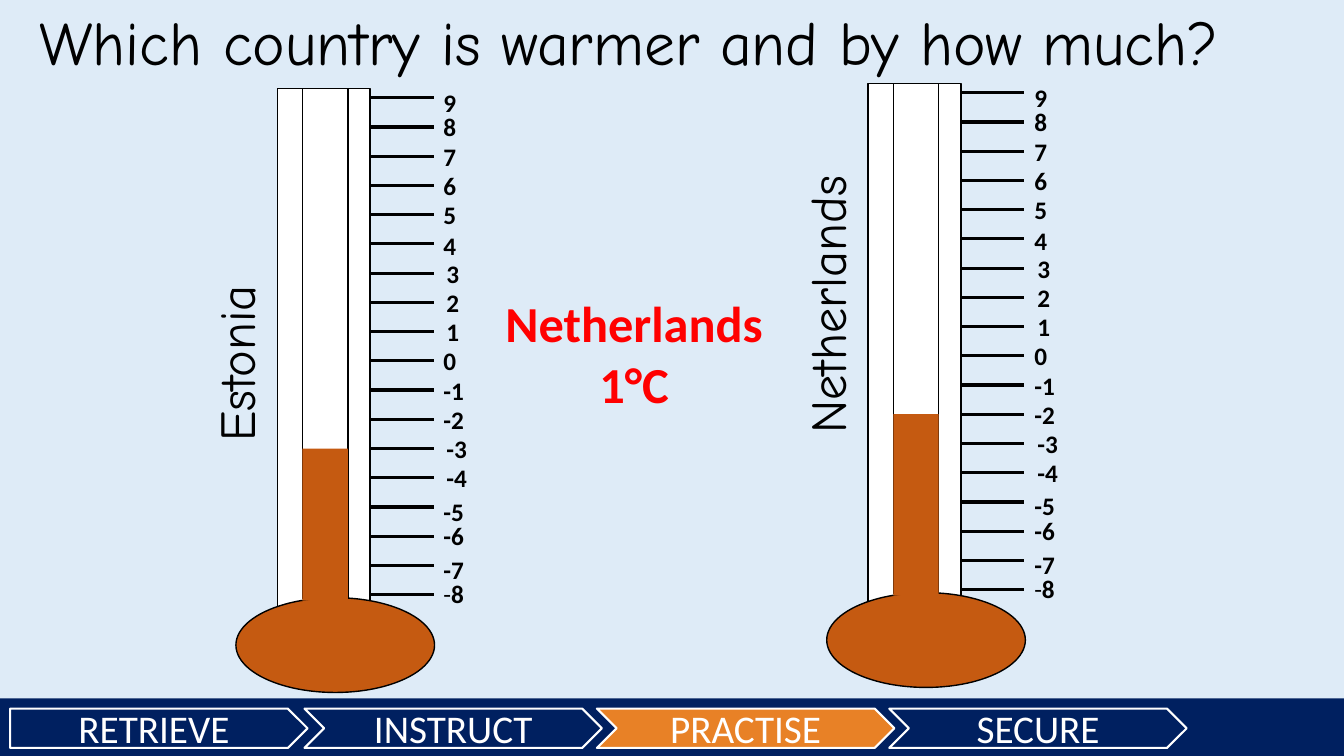
import pptx
import pptx.dml.color
import pptx.enum.shapes
import pptx.enum.text
import pptx.oxml.ns
import pptx.util
from lxml import etree

Inches = pptx.util.Inches
KIND = pptx.enum.shapes.MSO_SHAPE
ALIGN = pptx.enum.text.PP_ALIGN
ANCHOR = pptx.enum.text.MSO_ANCHOR

HUES = {
    "sky": "DEEBF7", "navy": "002060", "amber": "E88126", "rust": "C55A11",
    "white": "FFFFFF", "black": "000000", "red": "FF0000",
}
FONTS = {
    "title": {"name": "Comic Neue", "size": pptx.util.Pt(44), "bold": False},
    "place": {"name": "Comic Neue", "size": pptx.util.Pt(36), "bold": False},
    "stage": {"name": "Calibri", "size": pptx.util.Pt(28), "bold": False},
    "mark": {"name": "Calibri", "size": pptx.util.Pt(18), "bold": True},
    "reply": {"name": "Calibri", "size": pptx.util.Pt(36), "bold": True},
}
STAGES = ["RETRIEVE", "INSTRUCT", "PRACTISE", "SECURE"]
TOP_MARK, LOW_MARK, STEP = 9, -8, 0.29
RIGHT = {-4, -3, 1, 2, 3}
DROP = {9: 0.05, 4: 0.02, -5: 0.04, -6: -0.01, -7: 0.04, -8: -0.01}


def hue(name):
    """Return the named colour."""
    return pptx.dml.color.RGBColor.from_string(HUES[name])


def style(font, kind, color):
    """Apply a named set of font values and a colour."""
    for key, value in FONTS[kind].items():
        setattr(font, key, value)
    font.color.rgb = hue(color)


def write(shape, text, kind, color="black", **form):
    """Write one paragraph into a shape and format it."""
    shape.text_frame.word_wrap = True
    para = shape.text_frame.paragraphs[0]
    run = para.add_run()
    run.text = text
    style(run.font, kind, color)
    for key, value in form.items():
        setattr(para, key, value)
    return para


def label(shapes, box, text, kind, color="black", turn=0, **form):
    """Add a text box, turned if asked."""
    item = shapes.add_textbox(*map(Inches, box))
    item.rotation = turn
    return write(item, text, kind, color, **form)


def block(shapes, kind, box, fill, edge=None, width=1):
    """Add a filled preset shape with an optional outline."""
    item = shapes.add_shape(kind, *map(Inches, box))
    item.shadow.inherit = False
    item.fill.solid()
    item.fill.fore_color.rgb = hue(fill)
    if edge:
        item.line.color.rgb = hue(edge)
        item.line.width = pptx.util.Pt(width)
    else:
        item.line.fill.background()
    return item


def tick(shapes, left, top):
    """Add one scale line."""
    ends = map(Inches, (left, top, left + 0.63, top))
    line = shapes.add_connector(pptx.enum.shapes.MSO_CONNECTOR.STRAIGHT, *ends)
    line.line.color.rgb = hue("black")
    line.line.width = pptx.util.Pt(2.25)
    etree.SubElement(line._element.spPr, pptx.oxml.ns.qn("a:effectLst"))


def scale(shapes, left, top):
    """Draw the scale lines and their numbers downwards from the top mark."""
    for row, mark in enumerate(range(TOP_MARK, LOW_MARK - 1, -1)):
        y = top + row * STEP
        tick(shapes, left, y)
        x = left + 0.63 + (0.03 if mark in RIGHT else 0)
        box = (x, y - 0.2 + DROP.get(mark, 0), 0.91, 0.4)
        if mark == LOW_MARK:
            para = label(shapes, box, "-", "mark")
            para.runs[0].font.bold = False
            run = para.add_run()
            run.text = str(-mark)
            style(run.font, "mark", "black")
        else:
            label(shapes, box, str(mark), "mark")


def gauge(slide, left, top, temp):
    """Draw a thermometer, filled up to its temperature."""
    shapes = slide.shapes.add_group_shape().shapes
    block(shapes, KIND.RECTANGLE, (left + 0.41, top, 0.92, 5.48), "white", "black")
    block(shapes, KIND.OVAL, (left, top + 5.05, 1.97, 0.94), "rust", "black")
    block(shapes, KIND.RECTANGLE, (left + 0.66, top, 0.45, 5.06), "white", "black")
    scale(shapes, left + 1.33, top + 0.09)
    level = 0.09 + (TOP_MARK - temp) * STEP
    box = (left + 0.66, top + level, 0.45, 5.08 - level)
    block(shapes, KIND.RECTANGLE, box, "rust")


def head(slide, box):
    """Place the title."""
    title = slide.shapes.title
    for key, value in zip(("left", "top", "width", "height"), box):
        setattr(title, key, Inches(value))
    frame = title.text_frame
    frame.auto_size = pptx.enum.text.MSO_AUTO_SIZE.NONE
    frame.vertical_anchor = ANCHOR.TOP
    write(title, "Which country is warmer and by how much?", "title",
          alignment=ALIGN.LEFT, line_spacing=0.9)


def foot(slide, left, top, width, height):
    """Draw the band of lesson stages."""
    block(slide.shapes, KIND.RECTANGLE, (left, top, width, height), "navy")
    for col, stage in enumerate(STAGES):
        kind = KIND.CHEVRON if col else KIND.PENTAGON
        fill = "amber" if stage == "PRACTISE" else "navy"
        x = left + (0.12 + 2.9 * col if col else 0.1)
        item = block(slide.shapes, kind, (x, top + 0.1, 2.95, 0.39), fill, "white", 1.5)
        item.text_frame.vertical_anchor = ANCHOR.MIDDLE
        write(item, stage, "stage", "white", alignment=ALIGN.CENTER)


def main():
    """Build and save the slide."""
    deck = pptx.Presentation()
    deck.slide_width, deck.slide_height = Inches(13.33), Inches(7.5)
    slide = deck.slides.add_slide(deck.slide_layouts[5])
    slide.background.fill.solid()
    slide.background.fill.fore_color.rgb = hue("sky")
    foot(slide, 0, 6.93, 13.33, 0.57)
    gauge(slide, 2.34, 0.88, -3)
    gauge(slide, 8.2, 0.83, -2)
    head(slide, (0.29, 0.07, 12.66, 1.25))
    label(slide.shapes, (1.17, 2.96, 2.33, 0.71), "Estonia", "place", turn=270)
    label(slide.shapes, (6.54, 2.38, 3.33, 0.71), "Netherlands", "place", turn=270)
    label(slide.shapes, (4.87, 2.85, 2.84, 1.31), "Netherlands 1°C", "reply", "red",
          alignment=ALIGN.CENTER)
    deck.save("out.pptx")


if __name__ == "__main__":
    main()
